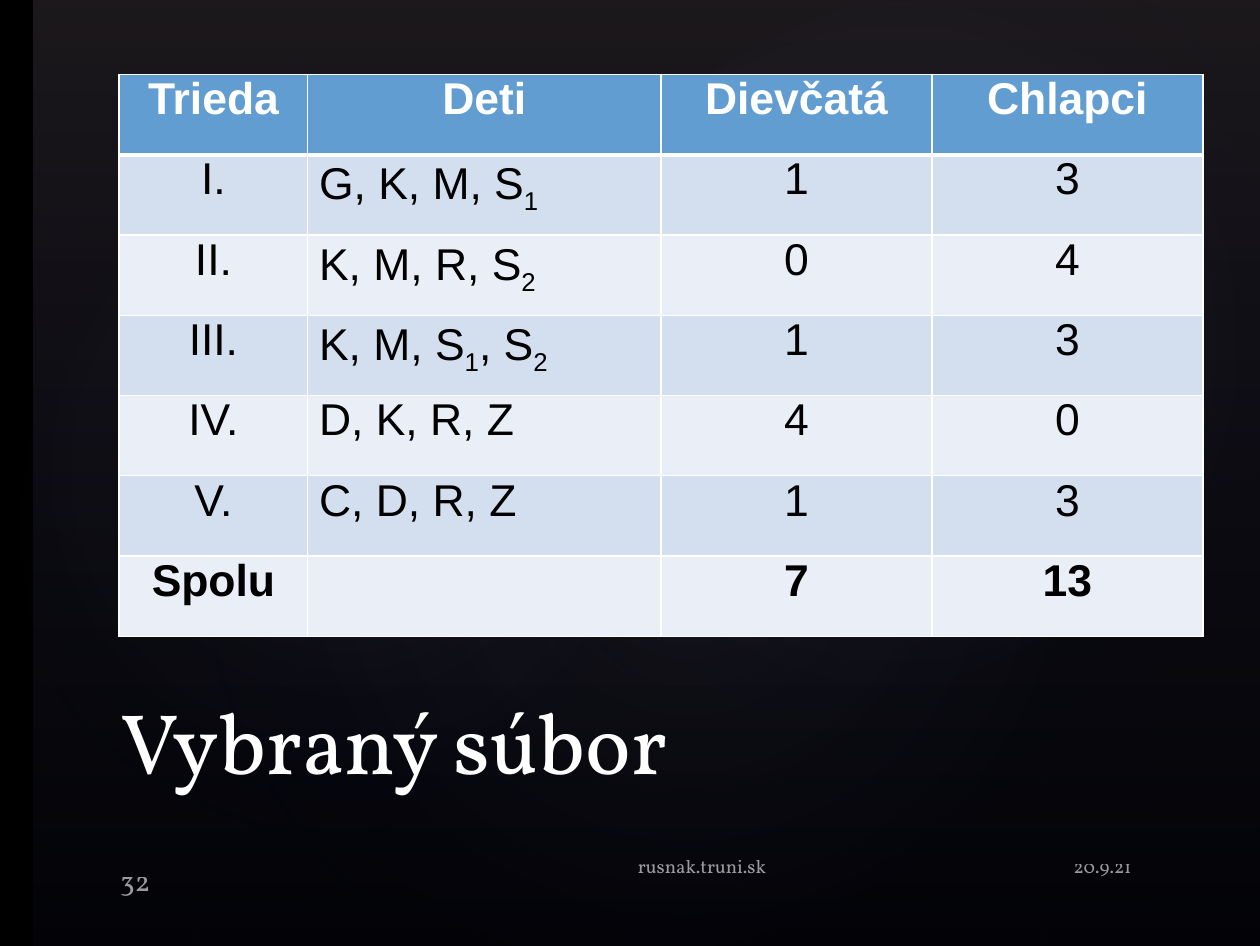
from itertools import groupby

from lxml.etree import SubElement
from pptx import Presentation
from pptx.dml.color import RGBColor
from pptx.enum.shapes import MSO_SHAPE
from pptx.enum.text import MSO_ANCHOR, PP_ALIGN
from pptx.oxml import parse_xml
from pptx.oxml.ns import nsdecls, qn
from pptx.util import Pt

PAGE_W, PAGE_H = 793.5, 595.5
BAND_W = 21
WHITE, BLACK, HEADER_BLUE = "FFFFFF", "000000", "629DD1"
STRIPES = ("D3DFEE", "EAEFF7")

NIGHT_SKY = [(0, "504652", 36), (100, "242852", 10)]
GLOWS = [
    ((118.8, 90, 628.6, 495.4), 328.7, 7),
    ((-23.8, 101.5, 481, 388.8), 294.3, 8),
    ((284.4, 10, 562.3, 412.6), 328.7, 8),
]

CLASSES = [
    ("Trieda", "Deti", "Dievčatá", "Chlapci"),
    ("I.", "G, K, M, S1", "1", "3"),
    ("II.", "K, M, R, S2", "0", "4"),
    ("III.", "K, M, S1, S2", "1", "3"),
    ("IV.", "D, K, R, Z", "4", "0"),
    ("V.", "C, D, R, Z", "1", "3"),
    ("Spolu", "", "7", "13"),
]
TABLE_LEFT, TABLE_TOP, ROW_H = 75, 46.8, 50.55
COLUMN_WIDTHS = (118.8, 222.4, 170.7, 170.7)
CHILDREN = 1

CAPTIONS = [
    ("Vybraný súbor", (67.7, 423.4, 654.5, 79.2), 54, 100, PP_ALIGN.LEFT, MSO_ANCHOR.BOTTOM, 4),
    ("20.9.21", (656.6, 534.2, 64.1, 31.7), 12, 60, PP_ALIGN.RIGHT, MSO_ANCHOR.TOP, 4),
    ("32", (67.7, 538.6, 64.8, 27.4), 18, 60, PP_ALIGN.LEFT, MSO_ANCHOR.BOTTOM, 1),
    ("rusnak.truni.sk", (393.8, 534.2, 98.6, 31.7), 12, 60, PP_ALIGN.LEFT, MSO_ANCHOR.TOP, 4),
]


def rgb(color):
    return RGBColor.from_string(color)


def points(box):
    return [Pt(value) for value in box]


def style_run(run, font, size, color, bold=False):
    run.font.name = font
    run.font.size = Pt(size)
    run.font.bold = bold
    run.font.color.rgb = rgb(color)


def add_backdrop(slide, preset, box, stops, direction, rotation=0):
    backdrop = slide.shapes.add_shape(preset, *points(box))
    backdrop.rotation = rotation
    backdrop.shadow.inherit = False
    backdrop.line.fill.background()
    backdrop.fill.background()
    stop_xml = "".join(
        f'<a:gs pos="{place * 1000}"><a:srgbClr val="{color}">'
        f'<a:alpha val="{opacity * 1000}"/></a:srgbClr></a:gs>'
        for place, color, opacity in stops
    )
    gradient = parse_xml(
        f'<a:gradFill {nsdecls("a")} rotWithShape="1">'
        f"<a:gsLst>{stop_xml}</a:gsLst>{direction}</a:gradFill>"
    )
    properties = backdrop._element.spPr
    properties.replace(properties.find(qn("a:noFill")), gradient)


def add_caption(slide, text, box, size, opacity, align, anchor, bottom):
    caption = slide.shapes.add_textbox(*points(box))
    frame = caption.text_frame
    frame.word_wrap = True
    frame.vertical_anchor = anchor
    frame.margin_left = frame.margin_right = Pt(8)
    frame.margin_top, frame.margin_bottom = Pt(4), Pt(bottom)
    frame.text = text
    paragraph = frame.paragraphs[0]
    paragraph.alignment = align
    run = paragraph.runs[0]
    style_run(run, "Vollkorn", size, WHITE)
    if opacity < 100:
        color = run._r.rPr.find(f".//{qn('a:srgbClr')}")
        SubElement(color, qn("a:alpha"), val=str(opacity * 1000))


def add_borders(cell, row):
    widths = {"L": 1, "R": 1, "T": 3 if row == 1 else 1, "B": 3 if row == 0 else 1}
    properties = cell._tc.get_or_add_tcPr()
    for side, width in widths.items():
        border = SubElement(properties, qn(f"a:ln{side}"), w=str(Pt(width)))
        SubElement(SubElement(border, qn("a:solidFill")), qn("a:srgbClr"), val=WHITE)


def fill_cell(cell, text, row, column):
    header, total = row == 0, row == len(CLASSES) - 1
    add_borders(cell, row)
    cell.fill.solid()
    cell.fill.fore_color.rgb = rgb(HEADER_BLUE if header else STRIPES[(row - 1) % 2])
    paragraph = cell.text_frame.paragraphs[0]
    paragraph.line_spacing = 0.87
    listing = column == CHILDREN and not header
    paragraph.alignment = PP_ALIGN.LEFT if listing else PP_ALIGN.CENTER
    for is_index, letters in groupby(text, lambda letter: listing and letter.isdigit()):
        run = paragraph.add_run()
        run.text = "".join(letters)
        style_run(run, "Arial", 28, WHITE if header else BLACK, header or total)
        if is_index:
            run._r.rPr.set("baseline", "-25000")


def add_classes(slide):
    frame = slide.shapes.add_table(
        len(CLASSES), len(COLUMN_WIDTHS),
        *points((TABLE_LEFT, TABLE_TOP, sum(COLUMN_WIDTHS), ROW_H * len(CLASSES))),
    )
    for column, width in zip(frame.table.columns, COLUMN_WIDTHS):
        column.width = Pt(width)
    for r, texts in enumerate(CLASSES):
        frame.table.rows[r].height = Pt(ROW_H)
        for c, text in enumerate(texts):
            fill_cell(frame.table.cell(r, c), text, r, c)


def main():
    deck = Presentation()
    deck.slide_width, deck.slide_height = Pt(PAGE_W), Pt(PAGE_H)
    slide = deck.slides.add_slide(deck.slide_layouts[6])
    slide.background.fill.solid()
    slide.background.fill.fore_color.rgb = rgb(BLACK)

    add_backdrop(slide, MSO_SHAPE.RECTANGLE, (BAND_W, 0, PAGE_W - BAND_W, PAGE_H),
                 NIGHT_SKY, '<a:lin ang="5400000" scaled="0"/>')
    center = ('<a:path path="circle"><a:fillToRect l="50000" t="50000" '
              'r="50000" b="50000"/></a:path>')
    for box, rotation, opacity in GLOWS:
        add_backdrop(slide, MSO_SHAPE.OVAL, box,
                     [(0, "C4BCC6", opacity), (58, "242852", 0)], center, rotation)

    for caption in CAPTIONS:
        add_caption(slide, *caption)
    add_classes(slide)
    deck.save("out.pptx")


if __name__ == "__main__":
    main()
